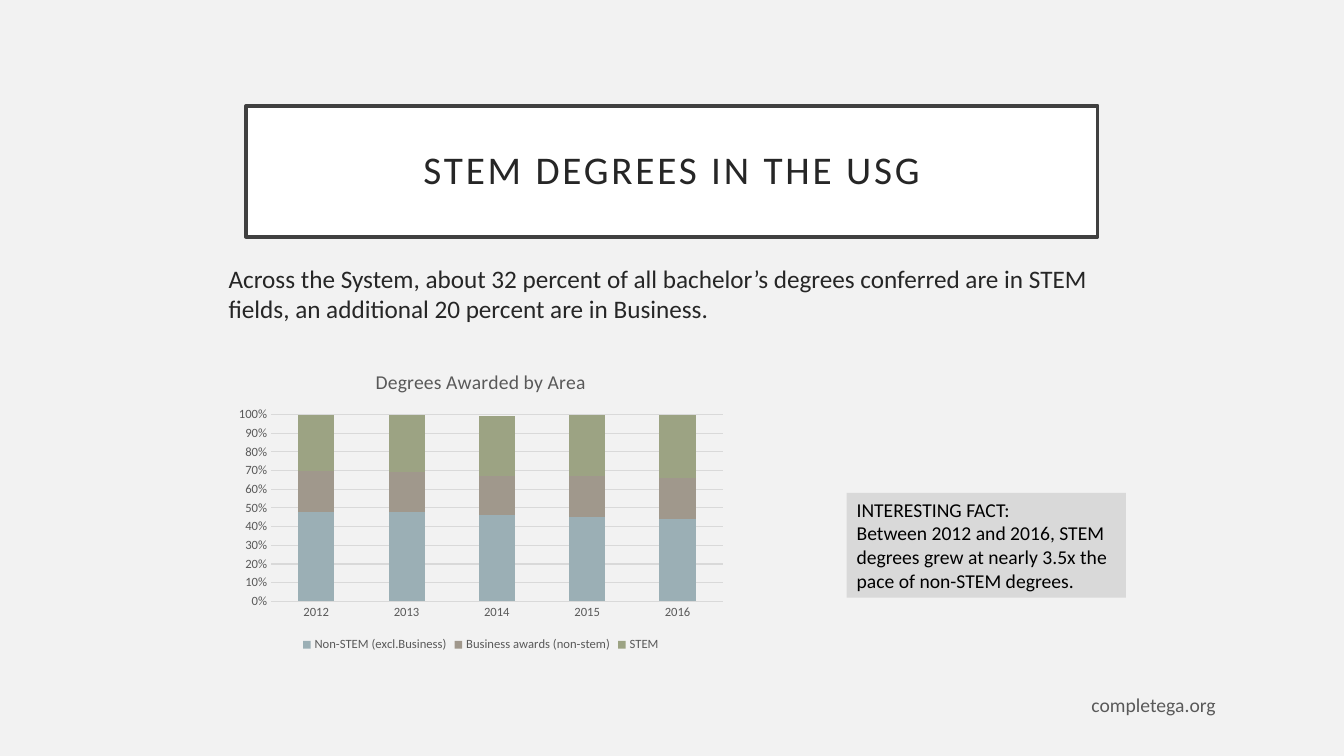
from dataclasses import dataclass

from pptx import Presentation
from pptx import util as u
from pptx.chart import data
from pptx.dml import color
from pptx.enum import chart as charts, shapes, text

Pt = u.Pt


@dataclass(frozen=True)
class Theme:
    font: str = "Calibri"
    background: str = "F2F2F2"
    title_fill: str = "FFFFFF"
    title_line: str = "404040"
    fact_fill: str = "D9D9D9"
    grid: str = "D9D9D9"
    ink: str = "262626"
    black: str = "000000"
    muted: str = "595959"
    title_size: float = 28
    body_size: float = 18
    small_size: float = 14
    chart_size: float = 10
    label_size: float = 9


theme = Theme()


def rgb(value):
    return color.RGBColor.from_string(value)


def style_font(font, size, shade):
    for name, value in {"name": theme.font, "size": Pt(size), "bold": False}.items():
        setattr(font, name, value)
    font.color.rgb = rgb(shade)


deck = Presentation()
deck.slide_width, deck.slide_height = Pt(960), Pt(540)
page = deck.slides.add_slide(deck.slide_layouts[6])
page.background.fill.solid()
page.background.fill.fore_color.rgb = rgb(theme.background)

# Text blocks
align, anchor = text.PP_ALIGN, text.MSO_ANCHOR
blocks = [
    dict(words="completega.org", at=(666, 491.76, 209.52, 24.48),
         size=theme.small_size, shade=theme.muted, align=align.RIGHT),
    dict(words="STEM DEGREES IN THE USG", at=(175.68, 75.6, 608.4, 93.6),
         size=theme.title_size, shade=theme.ink, align=align.CENTER,
         anchor=anchor.MIDDLE, inset=14.4, line_spacing=0.9, tracking=200,
         fill=theme.title_fill, line=theme.title_line),
    dict(words="Across the System, about 32 percent of all bachelor’s degrees conferred "
               "are in STEM fields, an additional 20 percent are in Business.",
         at=(156.24, 184.32, 648, 126.72), size=theme.body_size, shade=theme.ink),
    dict(words="INTERESTING FACT:\vBetween 2012 and 2016, STEM degrees grew at nearly "
               "3.5x the pace of non-STEM degrees.",
         at=(604.8, 352.08, 199.44, 74.88), size=theme.small_size,
         shade=theme.black, fill=theme.fact_fill),
]
for block in blocks:
    place = [Pt(length) for length in block["at"]]
    if "fill" in block:
        box = page.shapes.add_shape(shapes.MSO_SHAPE.RECTANGLE, *place)
        box.shadow.inherit = False
        box.fill.solid()
        box.fill.fore_color.rgb = rgb(block["fill"])
        if "line" in block:
            box.line.color.rgb = rgb(block["line"])
            box.line.width = Pt(2.5)
        else:
            box.line.fill.background()
    else:
        box = page.shapes.add_textbox(*place)

    frame = box.text_frame
    frame.word_wrap = True
    frame.vertical_anchor = block.get("anchor", anchor.TOP)
    if "inset" in block:
        for side in ("left", "top", "right", "bottom"):
            setattr(frame, f"margin_{side}", Pt(block["inset"]))
    para = frame.paragraphs[0]
    para.text = block["words"]
    para.alignment = block.get("align", align.LEFT)
    para.line_spacing = block.get("line_spacing", 1.0)
    for span in para.runs:
        style_font(span.font, block["size"], block["shade"])
        if "tracking" in block:
            span._r.get_or_add_rPr().set("spc", str(block["tracking"]))

# Degrees chart
areas = [
    ("Non-STEM (excl.Business)", "9BAFB5", (0.48, 0.48, 0.46, 0.45, 0.44)),
    ("Business awards (non-stem)", "A0988C", (0.22, 0.21, 0.21, 0.22, 0.22)),
    ("STEM", "9CA383", (0.3, 0.31, 0.32, 0.33, 0.34)),
]
degrees = data.CategoryChartData(number_format="0%")
degrees.categories = [str(year) for year in range(2012, 2017)]
for name, _, shares in areas:
    degrees.add_series(name, shares)

chart = page.shapes.add_chart(
    charts.XL_CHART_TYPE.COLUMN_STACKED,
    Pt(163.44), Pt(252.72), Pt(360), Pt(216), degrees).chart
style_font(chart.font, theme.chart_size, theme.black)

chart.has_title = True
chart.chart_title.include_in_layout = False
heading = chart.chart_title.text_frame
heading.text = "Degrees Awarded by Area"
style_font(heading.paragraphs[0].runs[0].font, theme.small_size, theme.muted)

chart.has_legend = True
chart.legend.position = charts.XL_LEGEND_POSITION.BOTTOM
chart.legend.include_in_layout = False
style_font(chart.legend.font, theme.label_size, theme.muted)

plot = chart.plots[0]
for name, value in {"gap_width": 150, "overlap": 100, "vary_by_categories": False}.items():
    setattr(plot, name, value)
for series, (_, shade, _) in zip(plot.series, areas):
    series.format.fill.solid()
    series.format.fill.fore_color.rgb = rgb(shade)

years, share = chart.category_axis, chart.value_axis
for axis, number_format in ((years, "General"), (share, "0%")):
    axis.major_tick_mark = axis.minor_tick_mark = charts.XL_TICK_MARK.NONE
    axis.tick_labels.number_format = number_format
    axis.tick_labels.number_format_is_linked = False
    style_font(axis.tick_labels.font, theme.label_size, theme.muted)
for name, value in {"minimum_scale": 0, "maximum_scale": 1, "major_unit": 0.1,
                    "has_major_gridlines": True}.items():
    setattr(share, name, value)
share.format.line.fill.background()
for line in (years.format.line, share.major_gridlines.format.line):
    line.color.rgb = rgb(theme.grid)
    line.width = Pt(0.75)

deck.save("out.pptx")
